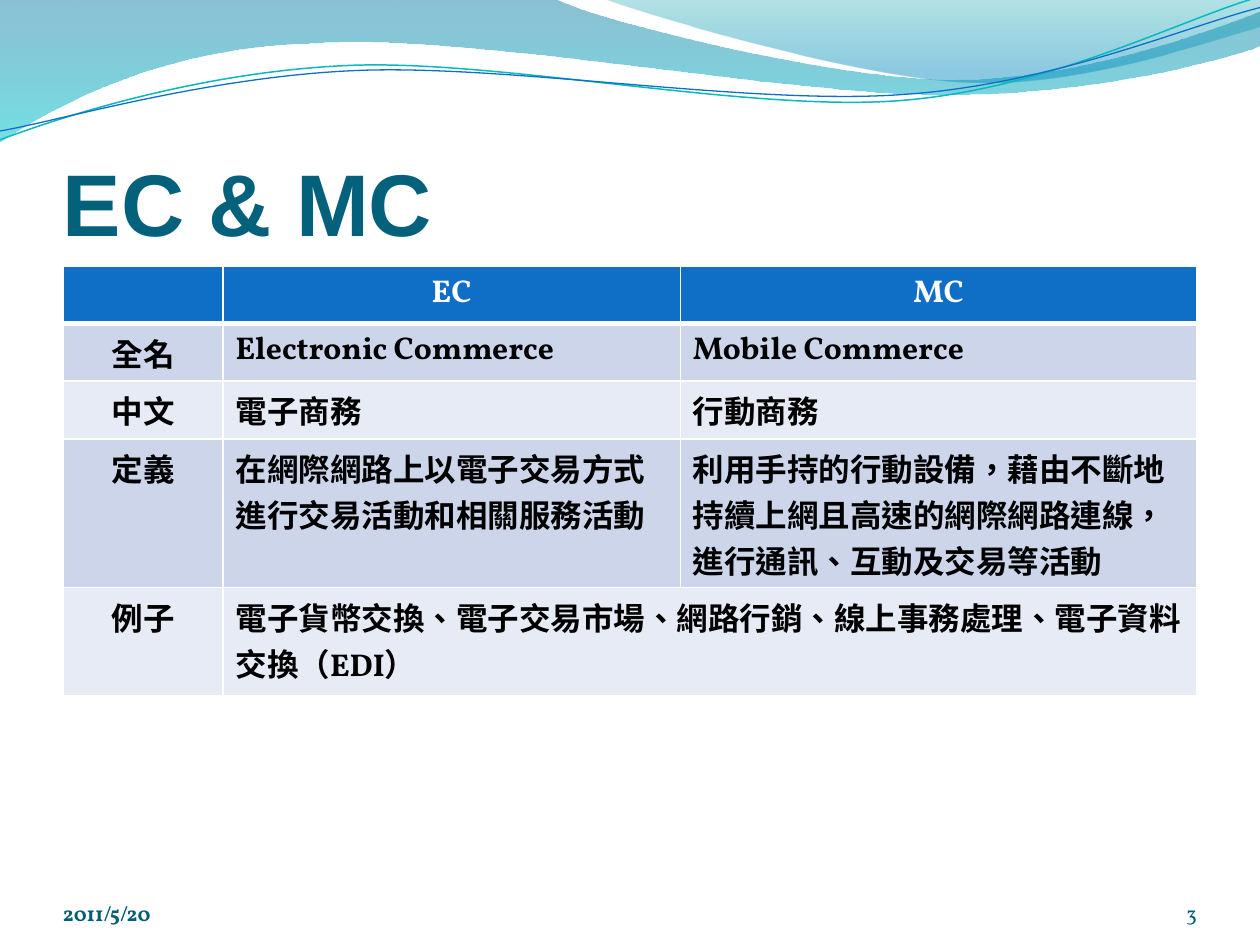
from lxml import etree
from pptx import Presentation
from pptx import util as u
from pptx.dml.color import RGBColor
from pptx.enum import text
from pptx.oxml.ns import qn

WIDTH, HEIGHT = u.Inches(10), u.Inches(7.5)
UNIT = WIDTH / 10

WHITE = RGBColor(0xFF, 0xFF, 0xFF)
BLACK = RGBColor(0x00, 0x00, 0x00)
BLUE = RGBColor(0x0F, 0x6F, 0xC6)
TURQUOISE = RGBColor(0x0A, 0xB8, 0xBF)
TITLE_TEAL = RGBColor(0x04, 0x61, 0x7B)
FOOTER_TEAL = RGBColor(0x04, 0x5D, 0x75)
BAND_DARK = RGBColor(0xCC, 0xD5, 0xEA)
BAND_LIGHT = RGBColor(0xE7, 0xEB, 0xF5)
DEEP_SEA = RGBColor(0x00, 0x74, 0xA1)
AQUA = RGBColor(0x00, 0xC6, 0xCF)
LAGOON = RGBColor(0x00, 0xA1, 0xA9)
SKY = RGBColor(0x00, 0x8B, 0xBF)

BODY_FONT = "Vollkorn"
LANGUAGE = "zh-TW"

BANNERS = [
    ([(0, 0), (4.4, -0.01), (4.76, 0.17, 6.64, 0.63, 7.58, 0.63),
      (8.53, 0.63, 9.58, 0.26, 10, 0.09), (10.01, 0.36),
      (9.83, 0.44, 8.7, 0.76, 7.46, 0.75), (6.22, 0.75, 3.82, 0.28, 2.57, 0.34),
      (1.29, 0.36, 0.46, 0.83, -0.01, 1.13), (0, 0)],
     [(0, DEEP_SEA, 45), (1, AQUA, 55)]),
    ([(4.79, -0.01), (5.09, 0.11, 6.82, 0.62, 7.69, 0.65),
      (8.56, 0.69, 9.61, 0.32, 10, 0.21), (10, 0), (4.79, -0.01)],
     [(0, LAGOON, 30), (0.8, SKY, 45)]),
]
RIPPLES = [
    ([(0, 1.11), (0.48, 0.93, 1.58, 0.57, 2.77, 0.52),
      (3.95, 0.47, 5.93, 0.89, 7.13, 0.8), (8.33, 0.71, 9.38, 0.15, 9.98, -0.02)],
     TURQUOISE, 0.85),
    ([(0, 1.04), (0.47, 0.96, 1.64, 0.61, 2.83, 0.56),
      (4.03, 0.51, 5.97, 0.84, 7.17, 0.75), (8.36, 0.67, 9.41, 0.21, 10, 0.06)],
     BLUE, 0.75),
]
COLUMN_WIDTHS = [1.27, 3.63, 4.1]
ROW_HEIGHTS = [0.45, 0.46, 0.46, 1.18, 0.86]
COMPARISON = [
    ["", "EC", "MC"],
    ["全名", "Electronic Commerce", "Mobile Commerce"],
    ["中文", "電子商務", "行動商務"],
    ["定義", "在網際網路上以電子交易方式進行交易活動和相關服務活動",
     "利用手持的行動設備，藉由不斷地持續上網且高速的網際網路連線，進行通訊、互動及交易等活動"],
    ["例子", "電子貨幣交換、電子交易市場、網路行銷、線上事務處理、電子資料交換（EDI）", ""],
]


def area(left, top, width, height):
    return [int(share * side / 100) for share, side in
            zip((left, top, width, height), (WIDTH, HEIGHT, WIDTH, HEIGHT))]


def bend(wave, steps):
    segments = iter(list(wave._element.iter(qn("a:lnTo"))))
    for step in steps:
        first = next(segments)
        if len(step) == 6:
            first.tag = qn("a:cubicBezTo")
            curve = etree.Element(qn("a:cubicBezTo"))
            first.getparent().replace(first, curve)
            curve.append(first[0])
            for control in (next(segments), next(segments)):
                curve.append(control[0])
                control.getparent().remove(control)


def add_wave(slide, outline, close):
    start, *steps = outline
    points = [(step[i] * UNIT, step[i + 1] * UNIT)
              for step in steps for i in range(0, len(step), 2)]
    builder = slide.shapes.build_freeform(start[0] * UNIT, start[1] * UNIT)
    builder.add_line_segments(points, close=close)
    wave = builder.convert_to_shape()
    wave.shadow.inherit = False
    bend(wave, steps)
    return wave


def add_banner(slide, outline, stops):
    banner = add_wave(slide, outline, True)
    banner.line.fill.background()
    banner.fill.gradient()
    banner.fill.gradient_angle = 270
    for stop, (position, color, _) in zip(banner.fill.gradient_stops, stops):
        stop.position = position
        stop.color.rgb = color
    gradient_colors = banner._element.spPr.iter(qn("a:gs"))
    for gradient_color, (_, _, opacity) in zip(gradient_colors, stops):
        etree.SubElement(gradient_color[0], qn("a:alpha"), val=str(opacity * 1000))


def add_ripple(slide, outline, color, weight):
    ripple = add_wave(slide, outline, False)
    ripple.fill.background()
    ripple.line.color.rgb = color
    ripple.line.width = u.Pt(weight)


def write(frame, words, color, size, align=text.PP_ALIGN.LEFT, bold=True, font=BODY_FONT):
    paragraph = frame.paragraphs[0]
    paragraph.alignment = align
    run = paragraph.add_run()
    run.text = words
    for name, value in {"name": font, "size": u.Pt(size), "bold": bold}.items():
        setattr(run.font, name, value)
    run.font.color.rgb = color
    run._r.get_or_add_rPr().set("lang", LANGUAGE)


def add_label(slide, place, words, color, size, top_inset=0, **style):
    frame = slide.shapes.add_textbox(*area(*place)).text_frame
    layout = {"word_wrap": True, "vertical_anchor": text.MSO_ANCHOR.BOTTOM,
              "margin_left": 0, "margin_right": 0, "margin_bottom": 0,
              "margin_top": u.Inches(top_inset)}
    for name, value in layout.items():
        setattr(frame, name, value)
    write(frame, words, color, size, **style)


def add_borders(cell, weights):
    properties = cell._tc.get_or_add_tcPr()
    for index, (side, weight) in enumerate(weights.items()):
        border = etree.Element(qn("a:ln" + side), w=str(u.Pt(weight)))
        fill = etree.SubElement(border, qn("a:solidFill"))
        etree.SubElement(fill, qn("a:srgbClr"), val=str(WHITE))
        properties.insert(index, border)


def add_comparison(slide):
    frame = slide.shapes.add_table(len(COMPARISON), len(COLUMN_WIDTHS),
                                   *area(5, 28.2, 90, 45.47))
    table = frame.table
    table.horz_banding = False
    for column, width in zip(table.columns, COLUMN_WIDTHS):
        column.width = u.Inches(width)
    for r, entries in enumerate(COMPARISON):
        table.rows[r].height = u.Inches(ROW_HEIGHTS[r])
        header = r == 0
        for c, words in enumerate(entries):
            cell = table.cell(r, c)
            cell.fill.solid()
            cell.fill.fore_color.rgb = BLUE if header else BAND_DARK if r % 2 else BAND_LIGHT
            add_borders(cell, {"L": 1, "R": 1, "T": 3 if r == 1 else 1, "B": 3 if header else 1})
            if words:
                centred = header or c == 0
                write(cell.text_frame, words, WHITE if header else BLACK, 18,
                      text.PP_ALIGN.CENTER if centred else text.PP_ALIGN.LEFT)
    last = len(COMPARISON) - 1
    table.cell(last, 1).merge(table.cell(last, 2))


def main():
    deck = Presentation()
    deck.slide_width, deck.slide_height = WIDTH, HEIGHT
    slide = deck.slides.add_slide(deck.slide_layouts[6])
    for banner in BANNERS:
        add_banner(slide, *banner)
    for ripple in RIPPLES:
        add_ripple(slide, *ripple)
    add_label(slide, (5, 10.2, 90, 16.67), "EC & MC", TITLE_TEAL, 50,
              top_inset=0.05, font="Arial")
    add_comparison(slide)
    add_label(slide, (5, 92.67, 23.3, 5.33), "2011/5/20", FOOTER_TEAL, 12)
    add_label(slide, (86.7, 92.67, 8.3, 5.33), "3", FOOTER_TEAL, 12,
              align=text.PP_ALIGN.RIGHT, bold=False)
    deck.save("out.pptx")


if __name__ == "__main__":
    main()
